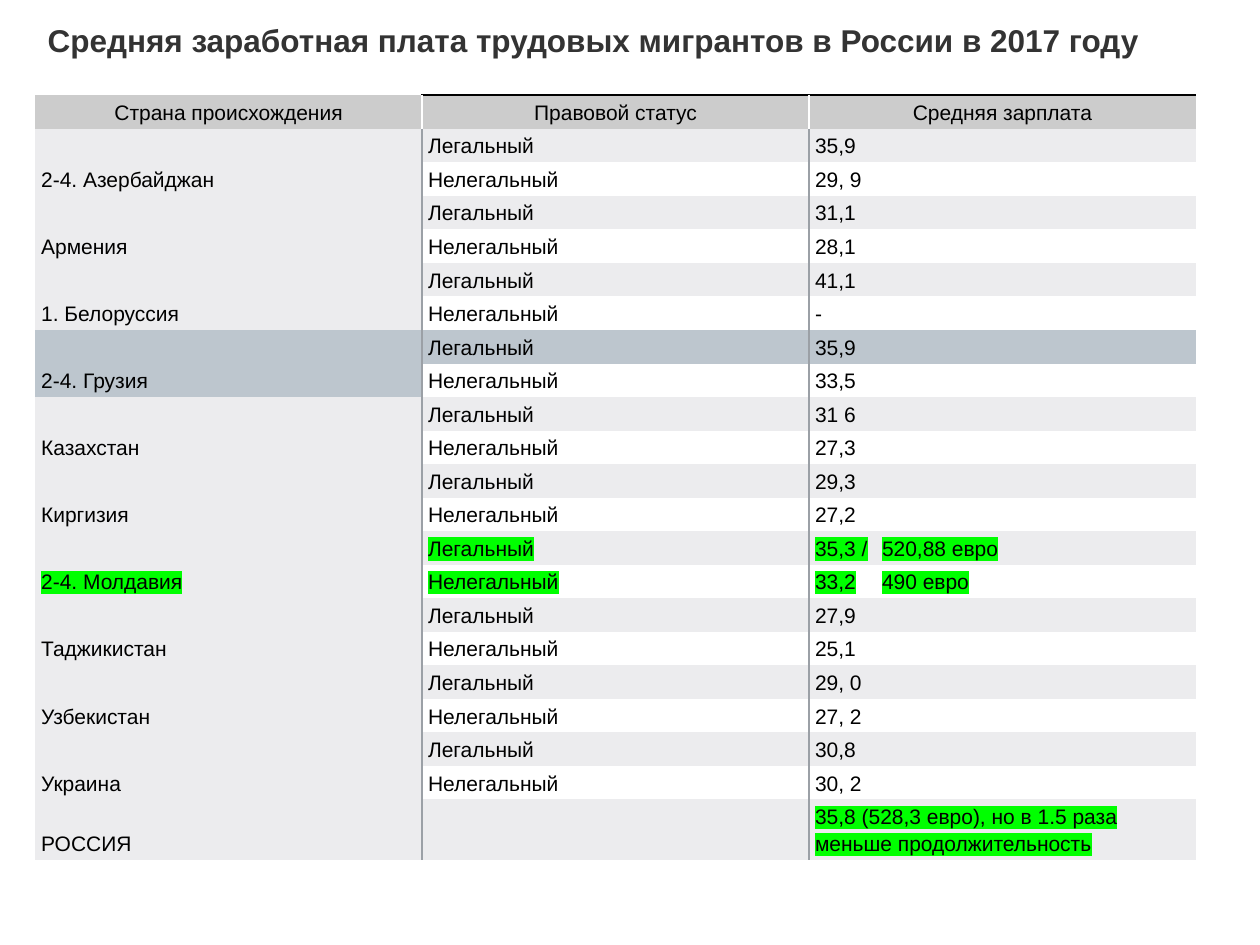
from lxml.etree import SubElement
from pptx import Presentation
from pptx.dml.color import RGBColor
from pptx.enum.text import MSO_ANCHOR, PP_ALIGN
from pptx.oxml.ns import qn
from pptx.util import Cm, Pt

# Content
TITLE = "Средняя заработная плата трудовых мигрантов в России в 2017 году"
HEADERS = ["Страна происхождения", "Правовой статус", "Средняя зарплата"]
STATUSES = ["Легальный", "Нелегальный"]
COUNTRIES = [
    ("2-4. Азербайджан", "35,9", "29, 9"),
    ("Армения", "31,1", "28,1"),
    ("1. Белоруссия", "41,1", "-"),
    ("2-4. Грузия", "35,9", "33,5"),
    ("Казахстан", "31 6", "27,3"),
    ("Киргизия", "29,3", "27,2"),
    ("2-4. Молдавия", "35,3 /\t520,88 евро", "33,2\t490 евро"),
    ("Таджикистан", "27,9", "25,1"),
    ("Узбекистан", "29, 0", "27, 2"),
    ("Украина", "30,8", "30, 2"),
]
RUSSIA = ["РОССИЯ", "", "35,8 (528,3 евро), но в 1.5 раза меньше продолжительность"]
SHADED_COUNTRY = "2-4. Грузия"
MARKED_COUNTRY = "2-4. Молдавия"

# Colours
BLACK = RGBColor(0x00, 0x00, 0x00)
WHITE = RGBColor(0xFF, 0xFF, 0xFF)
TITLE_GREY = RGBColor(0x33, 0x33, 0x33)
HEADER_GREY = RGBColor(0xCC, 0xCC, 0xCC)
BAND_GREY = RGBColor(0xEC, 0xEC, 0xEE)
SHADED_BLUE = RGBColor(0xBD, 0xC6, 0xCE)
RULE_GREY = RGBColor(0x9B, 0xA0, 0xA6)
MARKER_GREEN = RGBColor(0x00, 0xFF, 0x00)

# Sizes and formats
LEFT, TABLE_TOP = Cm(0.71), Cm(1.92)
COLUMN_WIDTH, ROW_HEIGHT, LAST_HEIGHT = Cm(7.8), Cm(0.64), Cm(1.12)
EURO_TAB = Cm(1.35)
NO_STYLE = "{2D5ABB26-0587-4C30-8999-92F81FD0307C}"
TITLE_BOX = {"left": LEFT, "top": Cm(0.25), "width": Cm(23), "height": Cm(1.8)}
TITLE_FRAME = {"margin_left": Cm(0.25), "margin_right": Cm(0.25),
               "margin_top": Cm(0.18), "vertical_anchor": MSO_ANCHOR.TOP,
               "word_wrap": True}
TITLE_FONT = {"name": "Arial", "size": Pt(18), "bold": True}
CELL_FORMAT = {"margin_left": Cm(0.12), "margin_right": Cm(0.12),
               "margin_top": Cm(0.05), "margin_bottom": Cm(0.08),
               "vertical_anchor": MSO_ANCHOR.BOTTOM}
CELL_FONT = {"name": "Arial", "size": Pt(12), "bold": False}


def set_all(target, values):
    for name, value in values.items():
        setattr(target, name, value)


def add_border(cell, side, color):
    line = SubElement(cell._tc.get_or_add_tcPr(), qn(f"a:ln{side}"), w=str(Pt(1)))
    fill = SubElement(line, qn("a:solidFill"))
    SubElement(fill, qn("a:srgbClr"), val=str(color))


def add_highlight(span, color):
    highlight = SubElement(span._r.get_or_add_rPr(), qn("a:highlight"))
    SubElement(highlight, qn("a:srgbClr"), val=str(color))
    # The highlight stands between the fill and the typeface
    span.font.fill._xPr.find(qn("a:solidFill")).addnext(highlight)


def write_cell(cell, text, fill, alignment, marked):
    set_all(cell, CELL_FORMAT)
    cell.fill.solid()
    cell.fill.fore_color.rgb = fill
    para = cell.text_frame.paragraphs[0]
    set_all(para, {"alignment": alignment, "line_spacing": 1.15})
    if not text:
        return
    if "\t" in text:
        tabs = SubElement(para._p.get_or_add_pPr(), qn("a:tabLst"))
        SubElement(tabs, qn("a:tab"), pos=str(EURO_TAB), algn="l")
    span = para.add_run()
    span.text = text
    set_all(span.font, CELL_FONT)
    span.font.color.rgb = BLACK
    if marked:
        add_highlight(span, MARKER_GREEN)


def table_rows():
    """Give each row as its texts, its fills and its marked columns."""
    rows = [(HEADERS, [HEADER_GREY] * 3, ())]
    for country, *wages in COUNTRIES:
        band = SHADED_BLUE if country == SHADED_COUNTRY else BAND_GREY
        marked = (0, 1, 2) if country == MARKED_COUNTRY else ()
        names, fills = [country, ""], [band, WHITE]
        for name, status, wage, fill in zip(names, STATUSES, wages, fills):
            rows.append(([name, status, wage], [band, fill, fill], marked))
    rows.append((RUSSIA, [BAND_GREY] * 3, (2,)))
    return rows


def add_wage_table(page):
    rows = table_rows()
    height = ROW_HEIGHT * (len(rows) - 1) + LAST_HEIGHT
    frame = page.shapes.add_table(len(rows), len(HEADERS), LEFT, TABLE_TOP,
                                  COLUMN_WIDTH * len(HEADERS), height)
    table = frame.table
    set_all(table, {"first_row": False, "horz_banding": False})
    table._tbl.tblPr.find(qn("a:tableStyleId")).text = NO_STYLE
    for column in table.columns:
        column.width = COLUMN_WIDTH
    for row in table.rows:
        row.height = ROW_HEIGHT
    table.rows[len(rows) - 1].height = LAST_HEIGHT

    # One country spans its two status rows
    for first in range(1, len(rows) - 1, 2):
        table.cell(first, 0).merge(table.cell(first + 1, 0))

    for r, (texts, fills, marked) in enumerate(rows):
        rule = RULE_GREY if r else WHITE
        alignment = PP_ALIGN.LEFT if r else PP_ALIGN.CENTER
        for c, (text, fill) in enumerate(zip(texts, fills)):
            cell = table.cell(r, c)
            if c > 0:
                add_border(cell, "L", rule)
            if c < len(HEADERS) - 1:
                add_border(cell, "R", rule)
            if r == 0 and c > 0:
                add_border(cell, "T", BLACK)
            write_cell(cell, text, fill, alignment, c in marked)


def add_title(page):
    box = page.shapes.title
    set_all(box, TITLE_BOX)
    set_all(box.text_frame, TITLE_FRAME)
    para = box.text_frame.paragraphs[0]
    para.alignment = PP_ALIGN.LEFT
    span = para.add_run()
    span.text = TITLE
    set_all(span.font, TITLE_FONT)
    span.font.color.rgb = TITLE_GREY


def main():
    deck = Presentation()
    deck.slide_width, deck.slide_height = Cm(25.4), Cm(19.05)
    page = deck.slides.add_slide(deck.slide_layouts[5])
    add_title(page)
    add_wage_table(page)
    deck.save("out.pptx")


if __name__ == "__main__":
    main()
